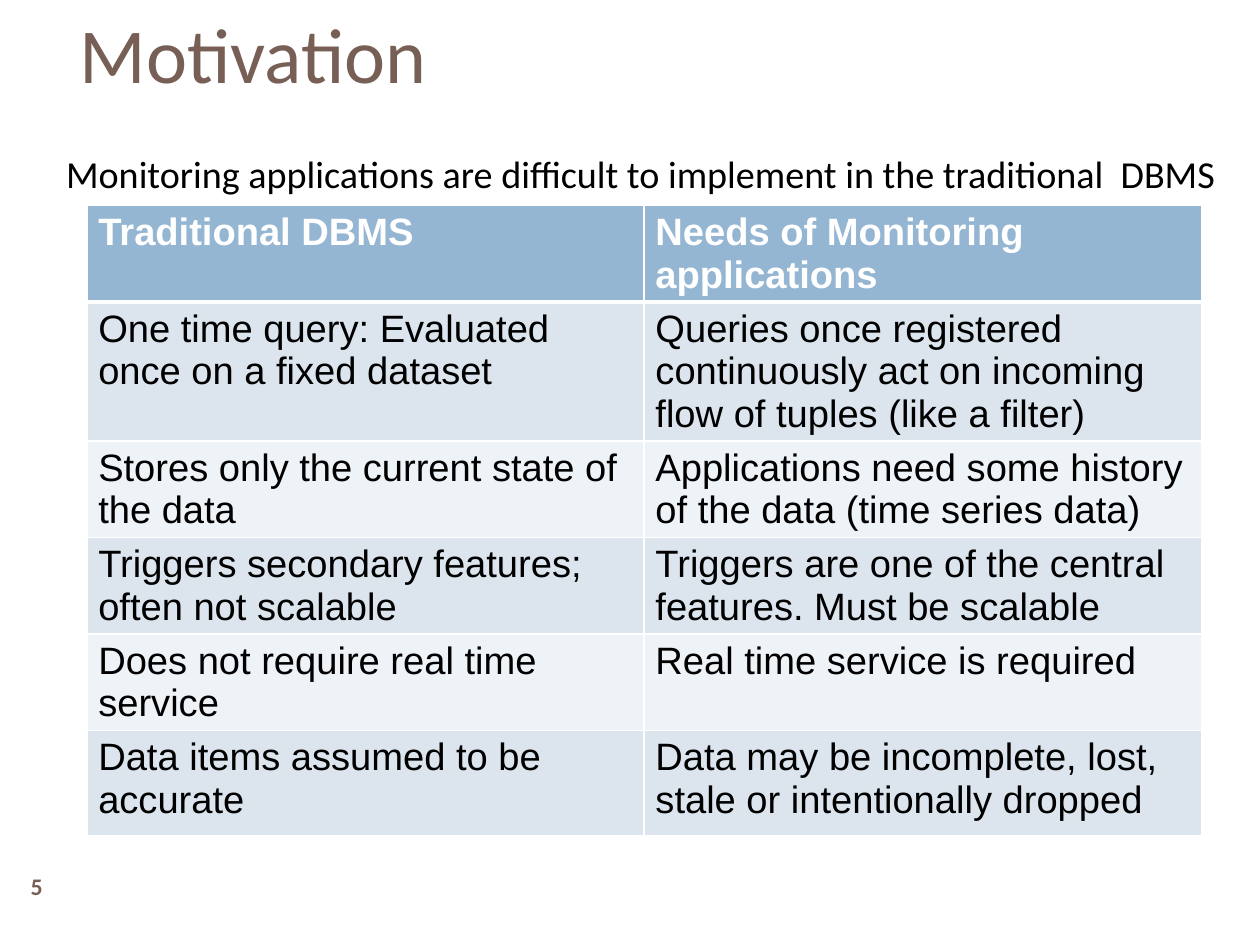
import pptx
import pptx.dml.color
import pptx.enum.text
import pptx.oxml
import pptx.oxml.ns
import pptx.util

Inches = pptx.util.Inches
ANCHOR = pptx.enum.text.MSO_ANCHOR
ALIGN = pptx.enum.text.PP_ALIGN
BROWN, BLACK, WHITE = "775F55", "000000", "FFFFFF"
HEADER_BLUE, BAND_DARK, BAND_LIGHT = "94B6D2", "DCE5EE", "EEF3F7"


def color(hex_string):
    return pptx.dml.color.RGBColor.from_string(hex_string)


def style(para, size, font_name, hex_string, bold=False):
    para.font.size = pptx.util.Pt(size)
    para.font.name = font_name
    para.font.bold = bold
    para.font.color.rgb = color(hex_string)


deck = pptx.Presentation()
deck.slide_width, deck.slide_height = pptx.util.Cm(28), pptx.util.Cm(21)
page = deck.slides.add_slide(deck.slide_layouts[6])

# Comparison table: header row, then alternating bands
rows = [
    ("Traditional DBMS", "Needs of Monitoring applications"),
    ("One time query: Evaluated once on a fixed dataset",
     "Queries once registered continuously act on incoming flow of tuples (like a filter)"),
    ("Stores only the current state of the data",
     "Applications need some history of the data (time series data)"),
    ("Triggers secondary features; often not scalable",
     "Triggers are one of the central features. Must be scalable"),
    ("Does not require real time service", "Real time service is required"),
    ("Data items assumed to be accurate",
     "Data may be incomplete, lost, stale or intentionally dropped"),
]
row_heights = [0.84, 1.21, 0.84, 0.84, 0.84, 0.92]
table = page.shapes.add_table(
    len(rows), 2, Inches(0.76), Inches(1.8), Inches(9.75), Inches(sum(row_heights))).table

for row_index, (texts, height) in enumerate(zip(rows, row_heights)):
    table.rows[row_index].height = Inches(height)
    is_header = row_index == 0
    band = BAND_DARK if row_index % 2 else BAND_LIGHT
    for column_index, text in enumerate(texts):
        cell = table.cell(row_index, column_index)
        cell.text = text
        para = cell.text_frame.paragraphs[0]
        style(para, 24, "Arial", WHITE if is_header else BLACK, is_header)

        # White rules, thicker between the header and the body
        properties = cell._tc.get_or_add_tcPr()
        widths = {"lnL": 1, "lnR": 1,
                  "lnT": 3 if row_index == 1 else 1,
                  "lnB": 3 if is_header else 1}
        for side, width in widths.items():
            properties.append(pptx.oxml.parse_xml(
                f'<a:{side} {pptx.oxml.ns.nsdecls("a")} w="{pptx.util.Pt(width)}">'
                f'<a:solidFill><a:srgbClr val="{WHITE}"/></a:solidFill></a:{side}>'))
        cell.fill.solid()
        cell.fill.fore_color.rgb = color(HEADER_BLUE if is_header else band)

# Title, lead sentence and page number
labels = [
    ("Motivation", (0.6, 0, 9.92, 1.38), 49, BROWN, False, True, ANCHOR.TOP, ALIGN.LEFT, 1),
    ("Monitoring applications are difficult to implement in the traditional  DBMS",
     (0.48, 1.3, 10.28, 0.48), 24, BLACK, False, False, ANCHOR.TOP, ALIGN.LEFT, 0.93),
    ("5", (0, 7.52, 0.64, 0.46), 15, BROWN, True, True, ANCHOR.MIDDLE, ALIGN.CENTER, 1),
]
for text, place, size, text_color, bold, wrap, anchor, align, spacing in labels:
    box = page.shapes.add_textbox(*map(Inches, place))
    frame = box.text_frame
    frame.word_wrap = wrap
    frame.vertical_anchor = anchor
    para = frame.paragraphs[0]
    para.text = text
    para.alignment = align
    para.line_spacing = spacing
    style(para, size, "Calibri", text_color, bold)

deck.save("out.pptx")
